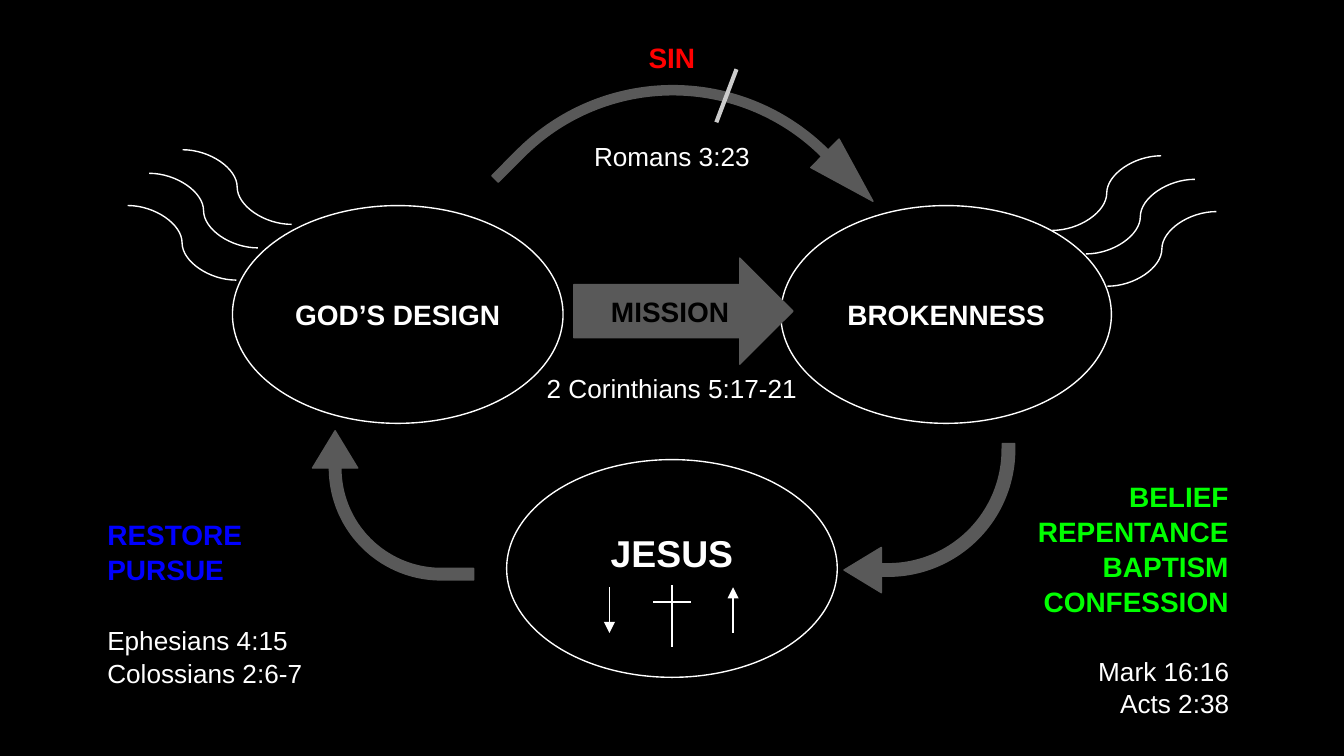
from pptx import Presentation
from pptx.dml.color import RGBColor
from pptx.enum.shapes import MSO_CONNECTOR as Link, MSO_SHAPE as Kind
from pptx.enum.text import MSO_ANCHOR as Anchor, PP_ALIGN as Align
from pptx.oxml.ns import qn
from pptx.util import Pt
from lxml.etree import SubElement

PX = 4572  # 200 px to the inch
WHITE, GREY = "FFFFFF", "595959"


def px(*nums):
    return [n * PX for n in nums]


def hue(code):
    return RGBColor.from_string(code)


def write(shape, text, color, size, bold, align, gap=1.0):
    frame = shape.text_frame
    frame.word_wrap = True
    frame.margin_left = frame.margin_right = 20 * PX
    frame.margin_top = frame.margin_bottom = 20 * PX
    frame.text = text
    for para in frame.paragraphs:
        para.alignment = align
        para.line_spacing = gap
        for run in para.runs:
            font = run.font
            font.name, font.size, font.bold = "Arial", Pt(size), bold
            font.color.rgb = hue(color)
    return frame


def label(slide, box, text, color=WHITE, size=14, align=Align.CENTER):
    area = slide.shapes.add_textbox(*px(*box))
    frame = write(area, text, color, size, size > 14, align, 1.04)
    frame.vertical_anchor = Anchor.TOP


def form(slide, kind, box, fill=None, line=GREY, adjust=(), turn=0):
    shape = slide.shapes.add_shape(kind, *px(*box))
    shape.shadow.inherit = False
    if fill:
        shape.fill.solid()
        shape.fill.fore_color.rgb = hue(fill)
    else:
        shape.fill.background()
    shape.line.color.rgb = hue(line)
    shape.line.width = Pt(0.75)
    for i, value in enumerate(adjust):
        shape.adjustments[i] = value
    shape.rotation = turn
    return shape


def stroke(slide, start, end, kind=Link.STRAIGHT, color=WHITE, width=0.75, head=False):
    link = slide.shapes.add_connector(kind, *px(*start, *end))
    link.line.color.rgb = hue(color)
    link.line.width = Pt(width)
    props = link._element.spPr
    if head:
        SubElement(props.find(qn("a:ln")), qn("a:tailEnd"), type="triangle")
    SubElement(props, qn("a:effectLst"))


def oval(slide, x, y, text, size=15):
    shape = form(slide, Kind.OVAL, (x, y, 492, 324), line=WHITE)
    frame = write(shape, text, WHITE, size, True, Align.CENTER)
    frame.vertical_anchor = Anchor.MIDDLE
    return frame


def waves(slide, x, y, side):
    # Three wavy lines, rising outward: side is 1 for right, -1 for left
    for dx, dy in ((0, 0), (-50, -35), (32, 48)):
        left, low = x + side * dx, y + dy
        stroke(slide, (left, low), (left + side * 162, low - 111), Link.CURVE)


def jesus(slide, x, y):
    frame = oval(slide, x, y, "JESUS", 20)
    frame.margin_bottom = 68 * PX  # lifts the name above the signs
    mid = x + 246
    # Down arrow, cross, up arrow
    stroke(slide, (mid - 93, y + 190), (mid - 93, y + 258), head=True)
    stroke(slide, (mid + 91, y + 258), (mid + 91, y + 190), head=True)
    stroke(slide, (mid, y + 187), (mid, y + 279))
    stroke(slide, (mid + 28, y + 212), (mid - 28, y + 212))


def sin(slide, x, y):
    form(slide, Kind.BENT_ARROW, (x + 96, y + 30, 428, 404), GREY,
         adjust=(0.034, 0.074, 0.25, 0.809), turn=45)
    label(slide, (x, y, 568, 96), "SIN", "FF0000", 15)
    label(slide, (x, y + 149, 568, 96), "Romans 3:23")
    stroke(slide, (x + 380, y + 65), (x + 350, y + 144), color="CCCCCC", width=2.25)


def mission(slide, x, y):
    arrow = form(slide, Kind.RIGHT_ARROW, (x + 138, y, 326, 158), GREY)
    frame = write(arrow, "MISSION", "000000", 15, True, Align.CENTER)
    frame.vertical_anchor = Anchor.MIDDLE
    label(slide, (x, y + 148, 568, 96), "2 Corinthians 5:17-21")


def belief(slide, x, y):
    form(slide, Kind.BENT_ARROW, (x, y, 254, 222), GREY,
         adjust=(0.084, 0.152, 0.25, 0.85), turn=180)
    label(slide, (x + 188, y + 32, 404, 240),
          "BELIEF\nREPENTANCE\nBAPTISM\nCONFESSION", "00FF00", 15, Align.RIGHT)
    label(slide, (x + 25, y + 293, 568, 96), "Mark 16:16\nActs 2:38",
          align=Align.RIGHT)


def restore(slide, x, y):
    form(slide, Kind.BENT_ARROW, (x + 334, y, 222, 240), GREY,
         adjust=(0.077, 0.152, 0.25, 0.85), turn=270)
    label(slide, (x, y + 116, 404, 130), "RESTORE\nPURSUE", "0000FF", 15, Align.LEFT)
    label(slide, (x, y + 276, 568, 96), "Ephesians 4:15\nColossians 2:6-7",
          align=Align.LEFT)


def main():
    deck = Presentation()
    deck.slide_width, deck.slide_height = px(2000, 1125)
    slide = deck.slides.add_slide(deck.slide_layouts[6])
    back = slide.background.fill
    back.solid()
    back.fore_color.rgb = hue("000000")

    # Three circles
    oval(slide, 1162, 306, "BROKENNESS")
    oval(slide, 346, 306, "GOD’S DESIGN")
    jesus(slide, 754, 684)

    # Steps between them
    belief(slide, 1256, 660)
    restore(slide, 140, 632)
    sin(slide, 716, 38)
    mission(slide, 716, 384)

    # Waves on the outer sides
    waves(slide, 1616, 378, 1)
    waves(slide, 384, 369, -1)

    deck.save("out.pptx")


if __name__ == "__main__":
    main()
